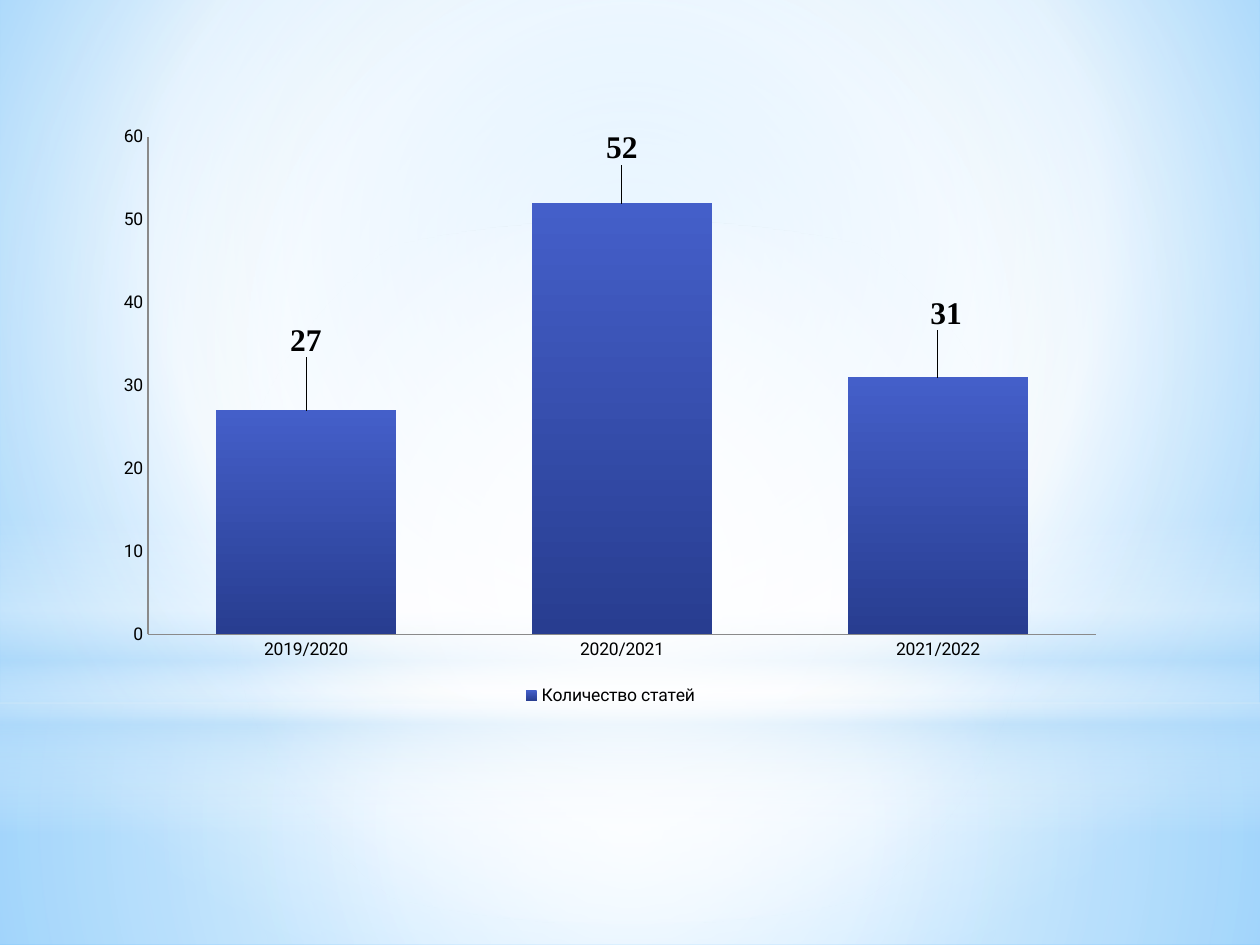
from lxml import etree
from pptx import Presentation
from pptx.chart.data import CategoryChartData
from pptx.dml.color import RGBColor
from pptx.enum.chart import XL_CHART_TYPE, XL_LABEL_POSITION, XL_LEGEND_POSITION, XL_TICK_MARK
from pptx.enum.shapes import MSO_SHAPE
from pptx.oxml.ns import qn
from pptx.util import Inches, Pt

COLUMNS = XL_CHART_TYPE.COLUMN_CLUSTERED
ABOVE = XL_LABEL_POSITION.OUTSIDE_END
BOTTOM = XL_LEGEND_POSITION.BOTTOM
NO_TICK = XL_TICK_MARK.NONE
RECT, OVAL = MSO_SHAPE.RECTANGLE, MSO_SHAPE.OVAL

WIDTH, HEIGHT = 10, 7.5
HORIZON = 5.58
CENTRE = (50, 50, 50, 50)
WHITE, SKY = "FFFFFF", "B4DCFA"

YEARS = ["2019/2020", "2020/2021", "2021/2022"]
SERIES_NAME = "Количество статей"
ARTICLES = [27, 52, 31]
LABEL_SHIFTS = [(0, -0.08), (0, -0.055), (0.008, -0.07)]
CHART_AREA = (0.83, 0.92, 8.03, 4.72)
PLOT_AREA = {"x": 0.043, "y": 0.035, "w": 0.937, "h": 0.837}

BACKGROUND = [(0, "9ED5FF", 100), (60, WHITE, 100), (100, "5BB9FF", 100)]
BAR_STOPS = [(0, "445FC9", 100), (100, "283D90", 100)]
GLOWS = [
    (RECT, HORIZON, HEIGHT - HORIZON,
     [(0, WHITE, 91), (37, WHITE, 76), (100, SKY, 79)], CENTRE),
    (RECT, 0, HORIZON,
     [(0, WHITE, 89), (48, WHITE, 62), (100, SKY, 79)], CENTRE),
    (RECT, 4.12, 2.5,
     [(0, WHITE, 0), (29, WHITE, 30), (45, SKY, 40),
      (55, WHITE, 26), (65, SKY, 60), (100, WHITE, 0)], None),
    (OVAL, 1.75, HORIZON, [(0, WHITE, 100), (56, WHITE, 0)], CENTRE),
]


def color(hex_value):
    return RGBColor.from_string(hex_value)


def paint_gradient(fill, owner, stops, focus=None):
    fill.gradient()
    gradient = owner.find(".//" + qn("a:gradFill"))
    for child in list(gradient):
        gradient.remove(child)
    stop_list = etree.SubElement(gradient, qn("a:gsLst"))
    for position, hex_value, opacity in stops:
        stop = etree.SubElement(stop_list, qn("a:gs"), pos=str(position * 1000))
        tint = etree.SubElement(stop, qn("a:srgbClr"), val=hex_value)
        if opacity < 100:
            etree.SubElement(tint, qn("a:alpha"), val=str(opacity * 1000))
    if focus:
        circle = etree.SubElement(gradient, qn("a:path"))
        circle.set("path", "circle")
        sides = {side: str(share * 1000) for side, share in zip("ltrb", focus)}
        etree.SubElement(circle, qn("a:fillToRect"), **sides)
    else:
        etree.SubElement(gradient, qn("a:lin"), ang="5400000", scaled="0")


def manual_layout(parent, index, **values):
    old = parent.find(qn("c:layout"))
    if old is not None:
        parent.remove(old)
    layout = etree.Element(qn("c:layout"))
    manual = etree.SubElement(layout, qn("c:manualLayout"))
    if "w" in values:
        etree.SubElement(manual, qn("c:layoutTarget"), val="inner")
        for mode in ("xMode", "yMode"):
            etree.SubElement(manual, qn("c:" + mode), val="edge")
    for key, share in values.items():
        etree.SubElement(manual, qn("c:" + key), val=str(share))
    parent.insert(index, layout)


def format_font(font, size=10, name="Roboto", bold=False):
    font.size, font.name, font.bold = Pt(size), name, bold
    font.color.rgb = color("000000")


def add_glows(slide):
    for kind, top, height, stops, focus in GLOWS:
        glow = slide.shapes.add_shape(kind, 0, Inches(top), Inches(WIDTH), Inches(height))
        glow.shadow.inherit = False
        glow.line.fill.background()
        paint_gradient(glow.fill, glow.element, stops, focus)


def add_articles_chart(slide):
    data = CategoryChartData()
    data.categories = YEARS
    data.add_series(SERIES_NAME, ARTICLES)
    chart = slide.shapes.add_chart(COLUMNS, *map(Inches, CHART_AREA), data).chart
    format_font(chart.font)
    chart.has_title = False
    chart.has_legend = True
    chart.legend.position = BOTTOM
    chart.legend.include_in_layout = False
    for axis in (chart.category_axis, chart.value_axis):
        axis.has_major_gridlines = False
        axis.major_tick_mark = axis.minor_tick_mark = NO_TICK
        axis.format.line.color.rgb = color("8A8A8A")
        axis.format.line.width = Pt(0.75)
    chart.value_axis.minimum_scale = 0
    chart.value_axis.maximum_scale = 60
    chart.value_axis.major_unit = 10

    plot = chart.plots[0]
    plot.gap_width = 75
    plot.vary_by_categories = False
    manual_layout(chart.element.find(".//" + qn("c:plotArea")), 0, **PLOT_AREA)
    articles = plot.series[0]
    paint_gradient(articles.format.fill, articles._element, BAR_STOPS)
    for index, (x, y) in enumerate(LABEL_SHIFTS):
        label = articles.points[index].data_label
        format_font(label.font, size=18, name="Times New Roman", bold=True)
        label.position = ABOVE
        manual_layout(articles._element.findall(".//" + qn("c:dLbl"))[index], 1, x=x, y=y)


def main():
    deck = Presentation()
    deck.slide_width, deck.slide_height = Inches(WIDTH), Inches(HEIGHT)
    slide = deck.slides.add_slide(deck.slide_layouts[6])
    paint_gradient(slide.background.fill, slide.element, BACKGROUND, (20, 10, 20, 60))
    add_glows(slide)
    add_articles_chart(slide)
    deck.save("out.pptx")


if __name__ == "__main__":
    main()
